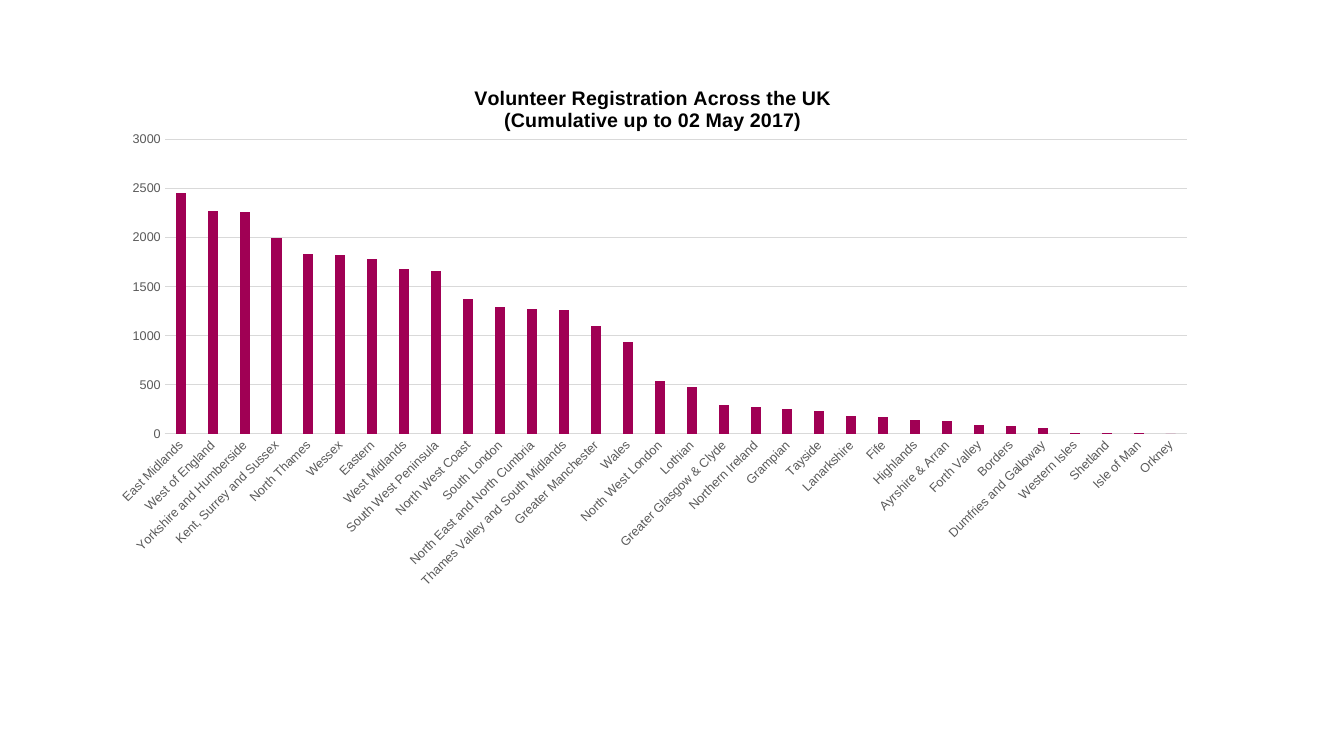
import dataclasses
import typing

import lxml.etree
import pptx
import pptx.chart.axis
import pptx.chart.chart
import pptx.chart.data
import pptx.dml.color
import pptx.enum.chart
import pptx.oxml.ns
import pptx.util

Inches = pptx.util.Inches
Pt = pptx.util.Pt
RGB = pptx.dml.color.RGBColor


@dataclasses.dataclass(frozen=True)
class Theme:
    font: str = "Arial"
    bar: RGB = RGB(0xA0, 0x00, 0x54)
    ink: RGB = RGB(0x00, 0x00, 0x00)
    label: RGB = RGB(0x59, 0x59, 0x59)
    rule: RGB = RGB(0xD9, 0xD9, 0xD9)
    title: float = 14
    body: float = 10
    tick: float = 9
    line: float = 0.75


class Region(typing.NamedTuple):
    name: str
    count: int


THEME = Theme()
TITLE = ["Volunteer Registration Across the UK", "(Cumulative up to 02 May 2017)"]
PLOT = {"x": 0.053, "y": 0.137, "w": 0.936, "h": 0.551}
TILT = -45
REGIONS = [
    Region("East Midlands", 2460),
    Region("West of England", 2270),
    Region("Yorkshire and Humberside", 2260),
    Region("Kent, Surrey and Sussex", 2000),
    Region("North Thames", 1830),
    Region("Wessex", 1820),
    Region("Eastern", 1780),
    Region("West Midlands", 1680),
    Region("South West Peninsula", 1660),
    Region("North West Coast", 1380),
    Region("South London", 1290),
    Region("North East and North Cumbria", 1270),
    Region("Thames Valley and South Midlands", 1260),
    Region("Greater Manchester", 1100),
    Region("Wales", 940),
    Region("North West London", 540),
    Region("Lothian", 480),
    Region("Greater Glasgow & Clyde", 300),
    Region("Northern Ireland", 270),
    Region("Grampian", 250),
    Region("Tayside", 230),
    Region("Lanarkshire", 180),
    Region("Fife", 170),
    Region("Highlands", 140),
    Region("Ayrshire & Arran", 130),
    Region("Forth Valley", 90),
    Region("Borders", 80),
    Region("Dumfries and Galloway", 60),
    Region("Western Isles", 10),
    Region("Shetland", 10),
    Region("Isle of Man", 10),
    Region("Orkney", 0),
]


def style(font: typing.Any, size: float, color: RGB, bold: bool = False) -> None:
    font.name = THEME.font
    font.size = Pt(size)
    font.bold = bold
    font.color.rgb = color


def write(frame: typing.Any, lines: list[str], **look: typing.Any) -> None:
    """Put each line in its own paragraph, formatted by the keywords of style."""
    for index, line in enumerate(lines):
        para = frame.add_paragraph() if index else frame.paragraphs[0]
        run = para.add_run()
        run.text = line
        style(run.font, **look)


def rule(line: typing.Any) -> None:
    line.color.rgb = THEME.rule
    line.width = Pt(THEME.line)


def set_axis(axis: typing.Any) -> None:
    axis.has_title = False
    axis.major_tick_mark = pptx.enum.chart.XL_TICK_MARK.NONE
    axis.minor_tick_mark = pptx.enum.chart.XL_TICK_MARK.NONE
    style(axis.tick_labels.font, THEME.tick, THEME.label)


def tilt(axis: typing.Any, angle: int) -> None:
    body = axis.tick_labels.font._element.getparent().getparent().getparent()
    body = body.find(pptx.oxml.ns.qn("a:bodyPr"))
    body.set("rot", str(angle * 60000))
    body.set("vert", "horz")


def place_plot(chart: pptx.chart.chart.Chart) -> None:
    """Fix the inner plot area as fractions of the chart frame."""
    qn = pptx.oxml.ns.qn
    area = chart._chartSpace.chart.plotArea
    for old in area.findall(qn("c:layout")):
        area.remove(old)
    layout = lxml.etree.Element(qn("c:layout"))
    area.insert(0, layout)
    manual = lxml.etree.SubElement(layout, qn("c:manualLayout"))
    parts = {"layoutTarget": "inner", "xMode": "edge", "yMode": "edge"} | PLOT
    for tag, value in parts.items():
        lxml.etree.SubElement(manual, qn(f"c:{tag}")).set("val", str(value))


def add_bars(slide: typing.Any) -> None:
    data = pptx.chart.data.CategoryChartData()
    data.categories = [region.name for region in REGIONS]
    data.add_series("Series 1", [region.count for region in REGIONS])
    chart = slide.shapes.add_chart(
        pptx.enum.chart.XL_CHART_TYPE.COLUMN_CLUSTERED,
        Inches(1.06), Inches(0.66), Inches(10.83), Inches(5.3), data,
    ).chart
    chart.has_legend = False
    style(chart.font, THEME.body, THEME.ink)
    write(chart.chart_title.text_frame, TITLE,
          size=THEME.title, color=THEME.ink, bold=True)
    chart.chart_title.include_in_layout = False

    plot = chart.plots[0]
    plot.vary_by_categories = False
    plot.gap_width = 219
    plot.overlap = -27
    fill = plot.series[0].format.fill
    fill.solid()
    fill.fore_color.rgb = THEME.bar

    names, counts = chart.category_axis, chart.value_axis
    for axis in (names, counts):
        set_axis(axis)
    tilt(names, TILT)
    rule(names.format.line)
    counts.minimum_scale = 0
    counts.maximum_scale = 3000
    counts.major_unit = 500
    counts.format.line.fill.background()
    rule(counts.major_gridlines.format.line)
    place_plot(chart)


def main() -> None:
    deck = pptx.Presentation()
    deck.slide_width = Inches(13.33)
    deck.slide_height = Inches(7.5)
    add_bars(deck.slides.add_slide(deck.slide_layouts[6]))
    deck.save("out.pptx")


if __name__ == "__main__":
    main()
